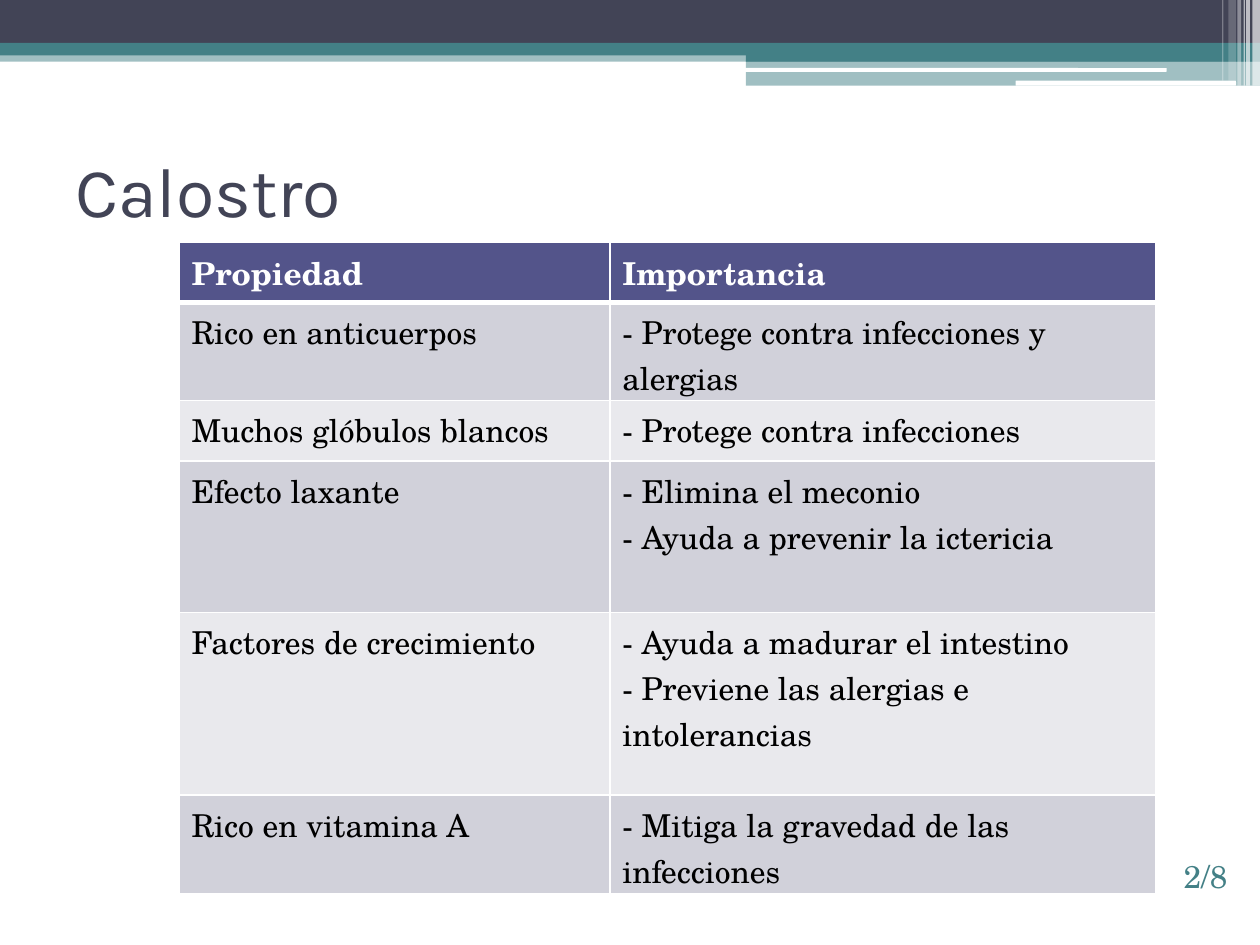
from lxml.etree import SubElement as Sub
from pptx import Presentation
from pptx.dml.color import RGBColor as RGB
from pptx.enum.shapes import MSO_SHAPE as Kind
from pptx.enum.text import MSO_ANCHOR as Anchor, PP_ALIGN as Align
from pptx.oxml.ns import qn
from pptx.util import Inches, Pt

HUE = {"teal": "438086", "slate": "424456", "white": "FFFFFF", "black": "000000",
       "head": "53548A", "odd": "D1D1DA", "even": "E9E9ED"}
HEAD, BODY = "Karla", "TeX Gyre Schola"

deck = Presentation()
deck.slide_width, deck.slide_height = Inches(10), Inches(7.5)
slide = deck.slides.add_slide(deck.slide_layouts[6])

# Grid of 100 columns by 75 rows
col, row = deck.slide_width / 100, deck.slide_height / 75


def place(x, y, w, h):
    return int(x * col), int(y * row), int(w * col), int(h * row)


def write(frame, text, font=BODY, size=18, hue="black", bold=False,
          align=Align.LEFT, anchor=Anchor.TOP):
    frame.word_wrap = True
    frame.vertical_anchor = anchor
    frame.text = text
    for para in frame.paragraphs:
        para.alignment = align
        face = para.runs[0].font
        face.name, face.size, face.bold = font, Pt(size), bold
        face.color.rgb = RGB.from_string(HUE[hue])


# Header bands, white rules and fading stripes: x, y, w, h, hue, opacity
bands = [
    (0, 4, 100, 0.9, "teal", 50),
    (0, 0, 100, 3.4, "slate", 100),
    (0, 3.4, 100, 1, "teal", 100),
    (59.2, 3.9, 40.8, 1, "teal", 100),
    (59.2, 4.8, 40.8, 2, "teal", 50),
]
rules = [(59.1, 5.4, 33.5, 0.3, "white", 100), (80.6, 6.4, 17.5, 0.4, "white", 100)]
stripes = [(x, 0, w, h, "white", alpha) for x, w, h, alpha in [
    (99.4, 0.6, 6.8, 65), (98.9, 0.3, 6.8, 65), (98.7, 0.1, 6.8, 60),
    (98.2, 0.3, 6.8, 40), (97.5, 0.6, 6.4, 20), (97, 0.1, 6.4, 30)]]
for kind, group in [(Kind.RECTANGLE, bands), (Kind.ROUNDED_RECTANGLE, rules),
                    (Kind.RECTANGLE, stripes)]:
    for x, y, w, h, hue, alpha in group:
        bar = slide.shapes.add_shape(kind, *place(x, y, w, h))
        bar.shadow.inherit = False
        bar.line.fill.background()
        bar.fill.solid()
        bar.fill.fore_color.rgb = RGB.from_string(HUE[hue])
        if alpha < 100:
            tint = bar._element.spPr.find(qn("a:solidFill"))[0]
            Sub(tint, qn("a:alpha"), val=str(alpha * 1000))

# Title and page number
title = slide.shapes.add_textbox(*place(5, 9.2, 90, 11.7))
write(title.text_frame, "Calostro", font=HEAD, size=40, hue="slate", anchor=Anchor.MIDDLE)
page = slide.shapes.add_textbox(*place(84.2, 67.5, 14.2, 5))
write(page.text_frame, "2/8", hue="teal", align=Align.RIGHT)

# Table: row height, property, importance
facts = [
    (4.8, "Propiedad", "Importancia"),
    (7.8, "Rico en anticuerpos", "- Protege contra infecciones y alergias"),
    (4.8, "Muchos glóbulos blancos", "- Protege contra infecciones"),
    (12, "Efecto laxante", "- Elimina el meconio\n- Ayuda a prevenir la ictericia"),
    (14.5, "Factores de crecimiento",
     "- Ayuda a madurar el intestino\n- Previene las alergias e intolerancias"),
    (7.8, "Rico en vitamina A", "- Mitiga la gravedad de las infecciones"),
]
high = sum(fact[0] for fact in facts)
table = slide.shapes.add_table(len(facts), 2, *place(14.2, 19.2, 77.5, high)).table
for i, wide in enumerate([34.2, 43.3]):
    table.columns[i].width = int(wide * col)

for i, (tall, *texts) in enumerate(facts):
    table.rows[i].height = int(tall * row)
    top = i == 0
    shade = "head" if top else "odd" if i % 2 else "even"
    for j, text in enumerate(texts):
        cell = table.cell(i, j)
        write(cell.text_frame, text, hue="white" if top else "black", bold=top)
        # White cell borders, thicker below the header
        props = cell._tc.get_or_add_tcPr()
        for side in "LRTB":
            thick = 3 if (i, side) in [(0, "B"), (1, "T")] else 1
            edge = Sub(props, qn(f"a:ln{side}"), w=str(Pt(thick)))
            Sub(Sub(edge, qn("a:solidFill")), qn("a:srgbClr"), val=HUE["white"])
        cell.fill.solid()
        cell.fill.fore_color.rgb = RGB.from_string(HUE[shade])

deck.save("out.pptx")
